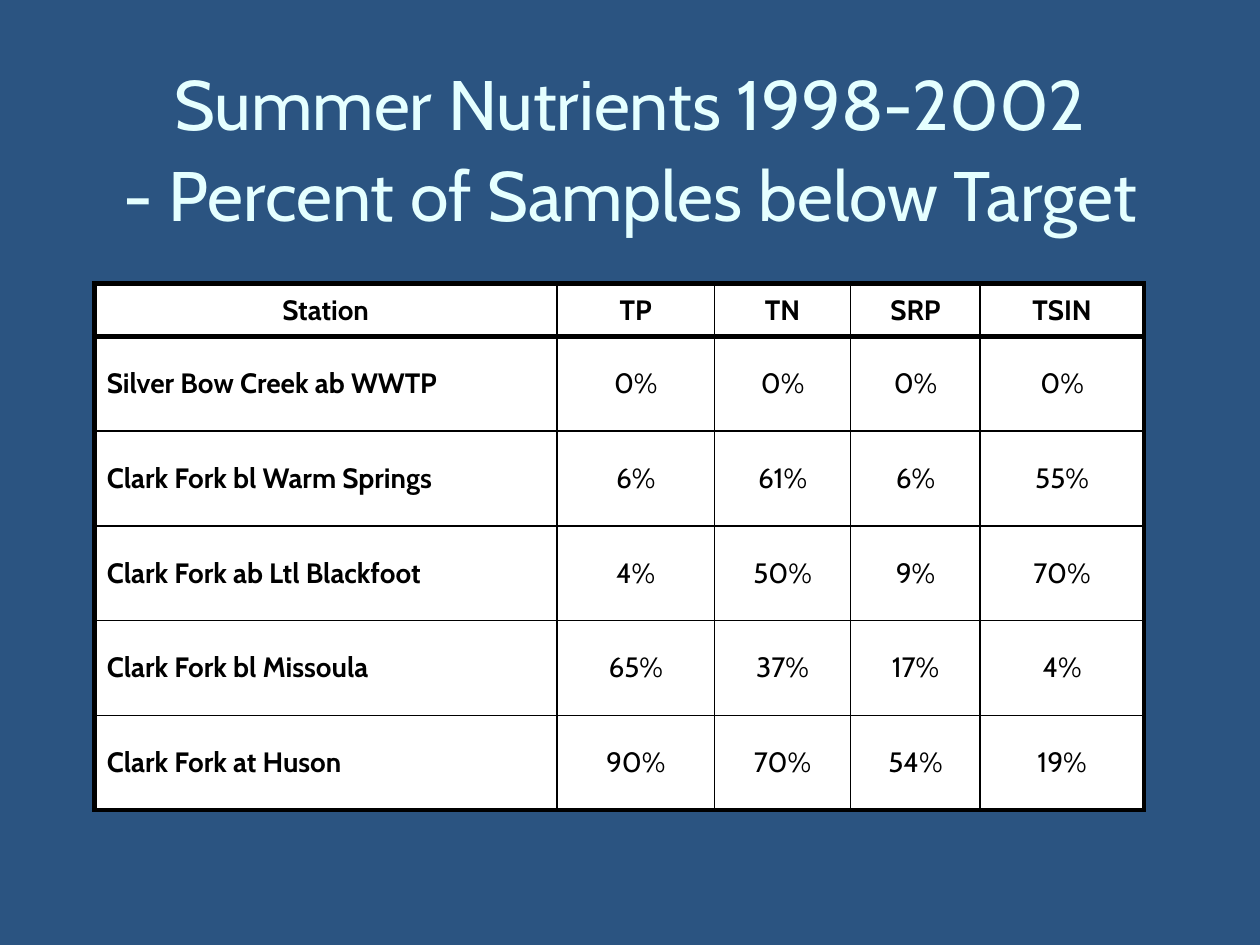
from dataclasses import dataclass

from lxml.etree import SubElement
from pptx import Presentation
from pptx.dml.color import RGBColor
from pptx.enum.text import MSO_ANCHOR as Anchor, PP_ALIGN as Align
from pptx.oxml.ns import qn
from pptx.slide import Slide
from pptx.table import _Cell as Cell
from pptx.util import Cm, Pt


@dataclass(frozen=True)
class Theme:
    font: str = "Cabin"
    background: RGBColor = RGBColor(0x2B, 0x54, 0x81)
    title: RGBColor = RGBColor(0xE5, 0xFF, 0xFF)
    paper: RGBColor = RGBColor(0xFF, 0xFF, 0xFF)
    ink: RGBColor = RGBColor(0x00, 0x00, 0x00)
    title_size: Pt = Pt(40)
    title_leading: Pt = Pt(52)
    table_size: Pt = Pt(16)
    thin: Pt = Pt(1)
    thick: Pt = Pt(3)


@dataclass(frozen=True)
class Station:
    name: str
    percents: tuple[int, ...]

    def texts(self) -> list[str]:
        return [self.name, *(f"{percent}%" for percent in self.percents)]


THEME = Theme()
TITLE_LINES = ("Summer Nutrients 1998-2002", "- Percent of Samples below Target")
HEADER = ["Station", "TP", "TN", "SRP", "TSIN"]
STATIONS = (
    Station("Silver Bow Creek ab WWTP", (0, 0, 0, 0)),
    Station("Clark Fork bl Warm Springs", (6, 61, 6, 55)),
    Station("Clark Fork ab Ltl Blackfoot", (4, 50, 9, 70)),
    Station("Clark Fork bl Missoula", (65, 37, 17, 4)),
    Station("Clark Fork at Huson", (90, 70, 54, 19)),
)
COLUMN_WIDTHS = (Cm(9.33), Cm(3.17), Cm(2.75), Cm(2.61), Cm(3.3))
ROW_HEIGHTS = (Cm(1.06), *[Cm(1.91)] * len(STATIONS))
HANGING_INDENT = Cm(0.95)


def add_title(slide: Slide) -> None:
    box = slide.shapes.add_textbox(Cm(1.27), Cm(1), Cm(22.86), Cm(3.81))
    frame = box.text_frame
    frame.word_wrap = True
    frame.vertical_anchor = Anchor.MIDDLE
    paragraph = frame.paragraphs[0]
    paragraph.alignment = Align.CENTER
    paragraph.line_spacing = THEME.title_leading
    paragraph.font.name = THEME.font
    paragraph.font.size = THEME.title_size
    paragraph.font.color.rgb = THEME.title
    for index, line in enumerate(TITLE_LINES):
        if index:
            paragraph.add_line_break()
        paragraph.add_run().text = line


def set_borders(cell: Cell, thick_sides: dict[str, bool]) -> None:
    """Draw all four borders; they must come before the fill in the cell's XML."""
    properties = cell._tc.get_or_add_tcPr()
    for position, (side, is_thick) in enumerate(thick_sides.items()):
        width = THEME.thick if is_thick else THEME.thin
        line = SubElement(properties, qn(f"a:ln{side}"), w=str(int(width)))
        fill = SubElement(line, qn("a:solidFill"))
        SubElement(fill, qn("a:srgbClr"), val=str(THEME.ink))
        properties.insert(position, line)


def fill_cell(cell: Cell, text: str, row: int, column: int) -> None:
    is_header, is_label = row == 0, column == 0
    cell.fill.solid()
    cell.fill.fore_color.rgb = THEME.paper
    set_borders(cell, {
        "L": is_label,
        "R": column == len(HEADER) - 1,
        "T": row <= 1,
        "B": is_header or row == len(STATIONS),
    })
    cell.vertical_anchor = Anchor.MIDDLE
    cell.text = text
    paragraph = cell.text_frame.paragraphs[0]
    paragraph.alignment = Align.LEFT if is_label and not is_header else Align.CENTER
    if not is_header:
        properties = paragraph._p.get_or_add_pPr()
        properties.set("marL", str(int(HANGING_INDENT)))
        properties.set("indent", str(-int(HANGING_INDENT)))
    paragraph.font.name = THEME.font
    paragraph.font.size = THEME.table_size
    paragraph.font.bold = is_header or is_label
    paragraph.font.color.rgb = THEME.ink


def add_station_table(slide: Slide) -> None:
    table = slide.shapes.add_table(
        len(ROW_HEIGHTS), len(COLUMN_WIDTHS), Cm(1.9), Cm(5.72),
        sum(COLUMN_WIDTHS), sum(ROW_HEIGHTS),
    ).table
    table.horz_banding = False
    for column, width in zip(table.columns, COLUMN_WIDTHS):
        column.width = width
    for row, height in zip(table.rows, ROW_HEIGHTS):
        row.height = height
    rows = [HEADER, *(station.texts() for station in STATIONS)]
    for row_index, texts in enumerate(rows):
        for column_index, text in enumerate(texts):
            cell = table.cell(row_index, column_index)
            fill_cell(cell, text, row_index, column_index)


def main() -> None:
    presentation = Presentation()
    presentation.slide_width = Cm(25.4)
    presentation.slide_height = Cm(19.05)
    slide = presentation.slides.add_slide(presentation.slide_layouts[6])
    slide.background.fill.solid()
    slide.background.fill.fore_color.rgb = THEME.background
    add_title(slide)
    add_station_table(slide)
    presentation.save("out.pptx")


if __name__ == "__main__":
    main()
